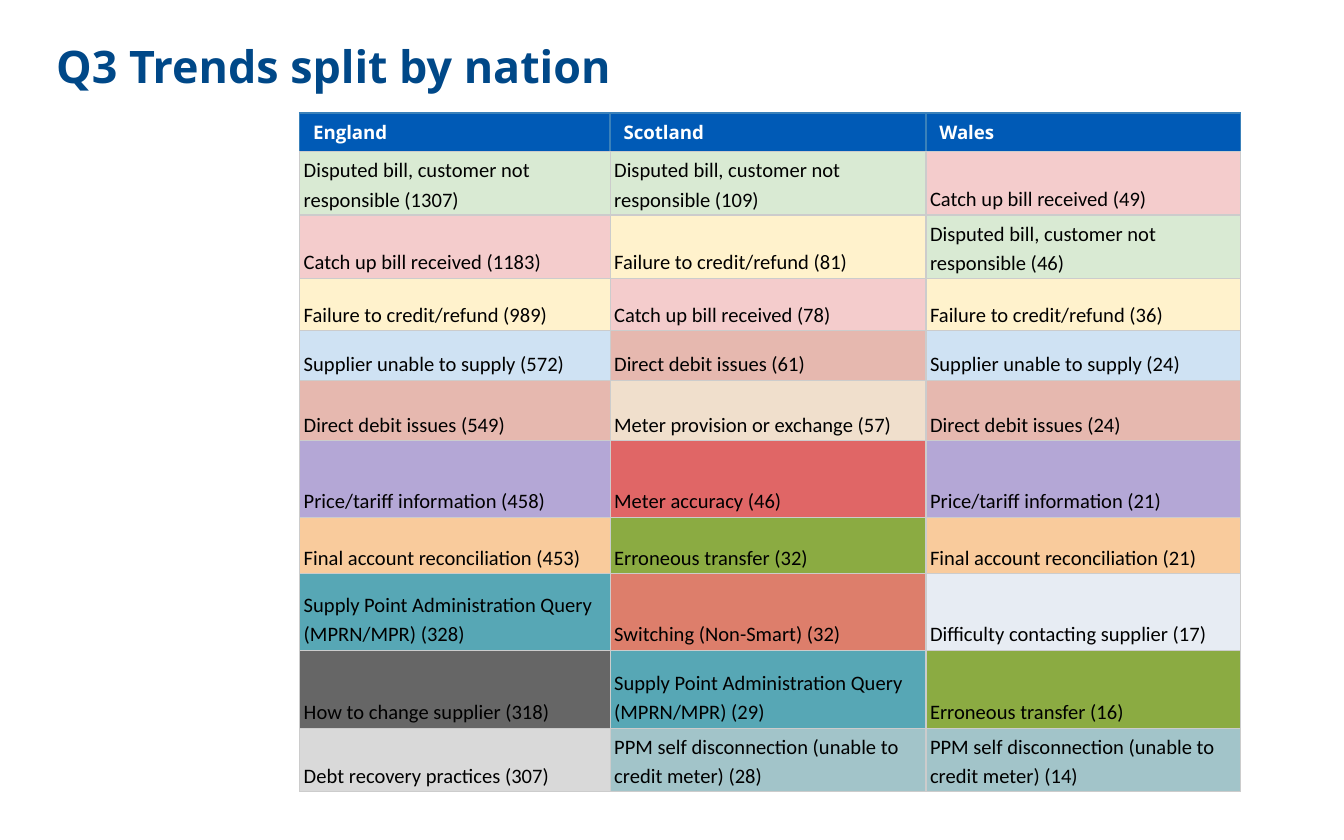
from dataclasses import dataclass

from lxml import etree
from pptx import Presentation
from pptx.dml.color import RGBColor
from pptx.enum.text import MSO_ANCHOR
from pptx.oxml.ns import qn
from pptx.util import Inches, Pt

TOP, BOTTOM = MSO_ANCHOR.TOP, MSO_ANCHOR.BOTTOM


@dataclass(frozen=True)
class Theme:
    title_font: str = "Open Sans"
    body_font: str = "Calibri"
    title_size: float = 24
    header_size: float = 10
    body_size: float = 11
    title: str = "004888"
    header_fill: str = "005AB6"
    header_line: str = "3A81BA"
    header_text: str = "FFFFFF"
    body_text: str = "000000"
    grid: str = "CCCCCC"


theme = Theme()

# Each complaint topic keeps one colour across the nations
TOPIC_FILLS = {
    "Disputed bill, customer not responsible": "D9EAD3",
    "Catch up bill received": "F4CCCC",
    "Failure to credit/refund": "FFF2CC",
    "Supplier unable to supply": "CFE2F3",
    "Direct debit issues": "E6B8AF",
    "Meter provision or exchange": "F0DFCC",
    "Price/tariff information": "B4A7D6",
    "Meter accuracy": "E06666",
    "Final account reconciliation": "F9CB9C",
    "Erroneous transfer": "8BAB42",
    "Supply Point Administration Query (MPRN/MPR)": "57A7B5",
    "Switching (Non-Smart)": "DD7E6B",
    "Difficulty contacting supplier": "E7ECF3",
    "How to change supplier": "666666",
    "Debt recovery practices": "D9D9D9",
    "PPM self disconnection (unable to credit meter)": "A2C4C9",
}

NATIONS = {
    "England": [
        ("Disputed bill, customer not responsible", 1307),
        ("Catch up bill received", 1183),
        ("Failure to credit/refund", 989),
        ("Supplier unable to supply", 572),
        ("Direct debit issues", 549),
        ("Price/tariff information", 458),
        ("Final account reconciliation", 453),
        ("Supply Point Administration Query (MPRN/MPR)", 328),
        ("How to change supplier", 318),
        ("Debt recovery practices", 307),
    ],
    "Scotland": [
        ("Disputed bill, customer not responsible", 109),
        ("Failure to credit/refund", 81),
        ("Catch up bill received", 78),
        ("Direct debit issues", 61),
        ("Meter provision or exchange", 57),
        ("Meter accuracy", 46),
        ("Erroneous transfer", 32),
        ("Switching (Non-Smart)", 32),
        ("Supply Point Administration Query (MPRN/MPR)", 29),
        ("PPM self disconnection (unable to credit meter)", 28),
    ],
    "Wales": [
        ("Catch up bill received", 49),
        ("Disputed bill, customer not responsible", 46),
        ("Failure to credit/refund", 36),
        ("Supplier unable to supply", 24),
        ("Direct debit issues", 24),
        ("Price/tariff information", 21),
        ("Final account reconciliation", 21),
        ("Difficulty contacting supplier", 17),
        ("Erroneous transfer", 16),
        ("PPM self disconnection (unable to credit meter)", 14),
    ],
}

COLUMN_WIDTHS = [2.31, 2.35, 2.34]
ROW_HEIGHTS = [0.29, 0.47, 0.47, 0.39, 0.37, 0.45, 0.57, 0.42, 0.57, 0.58, 0.47]


def style_text(paragraph, font_name, size, color, bold):
    for span in paragraph.runs:
        span.font.name = font_name
        span.font.size = Pt(size)
        span.font.bold = bold
        span.font.color.rgb = RGBColor.from_string(color)


def fill_cell(cell, text, fill, borders, inset_x, inset_y, anchor):
    cell.text_frame.text = text
    cell.vertical_anchor = anchor
    cell.margin_left = cell.margin_right = Inches(inset_x)
    cell.margin_top = cell.margin_bottom = Inches(inset_y)
    cell.fill.solid()
    cell.fill.fore_color.rgb = RGBColor.from_string(fill)
    # Border lines must come before the fill, in the order left, right, top, bottom
    properties = cell._tc.get_or_add_tcPr()
    for position, (side, (color, width)) in enumerate(zip("LRTB", borders)):
        line = etree.Element(qn(f"a:ln{side}"), w=str(Pt(width)))
        solid = etree.SubElement(line, qn("a:solidFill"))
        etree.SubElement(solid, qn("a:srgbClr"), val=color)
        properties.insert(position, line)


deck = Presentation()
deck.slide_width, deck.slide_height = Inches(10), Inches(6.25)
page = deck.slides.add_slide(deck.slide_layouts[6])

# Title
box = page.shapes.add_textbox(Inches(0.32), Inches(0.19), Inches(9), Inches(1.04))
frame = box.text_frame
frame.word_wrap = True
frame.margin_left = frame.margin_right = Inches(0.1)
frame.margin_top = frame.margin_bottom = Inches(0.1)
frame.text = "Q3 Trends split by nation"
style_text(frame.paragraphs[0], theme.title_font, theme.title_size, theme.title, True)

# Table grid
table = page.shapes.add_table(
    len(ROW_HEIGHTS), len(NATIONS), Inches(2.23), Inches(0.84),
    Inches(sum(COLUMN_WIDTHS)), Inches(sum(ROW_HEIGHTS)),
).table
table.horz_banding = False
for column, width in zip(table.columns, COLUMN_WIDTHS):
    column.width = Inches(width)
for row, height in zip(table.rows, ROW_HEIGHTS):
    row.height = Inches(height)

# One column per nation: header, then its ranked topics
grid_line = (theme.grid, 0.75)
header_borders = [(theme.header_line, 1)] * 3 + [grid_line]
for column_index, (nation, topics) in enumerate(NATIONS.items()):
    header = table.cell(0, column_index)
    fill_cell(header, nation, theme.header_fill, header_borders, 0.1, 0.05, TOP)
    style_text(header.text_frame.paragraphs[0], theme.title_font,
               theme.header_size, theme.header_text, True)
    for row_index, (topic, count) in enumerate(topics, start=1):
        cell = table.cell(row_index, column_index)
        fill_cell(cell, f"{topic} ({count})", TOPIC_FILLS[topic],
                  [grid_line] * 4, 0.03, 0.02, BOTTOM)
        paragraph = cell.text_frame.paragraphs[0]
        paragraph.line_spacing = 1.15
        style_text(paragraph, theme.body_font, theme.body_size, theme.body_text, False)

deck.save("out.pptx")
